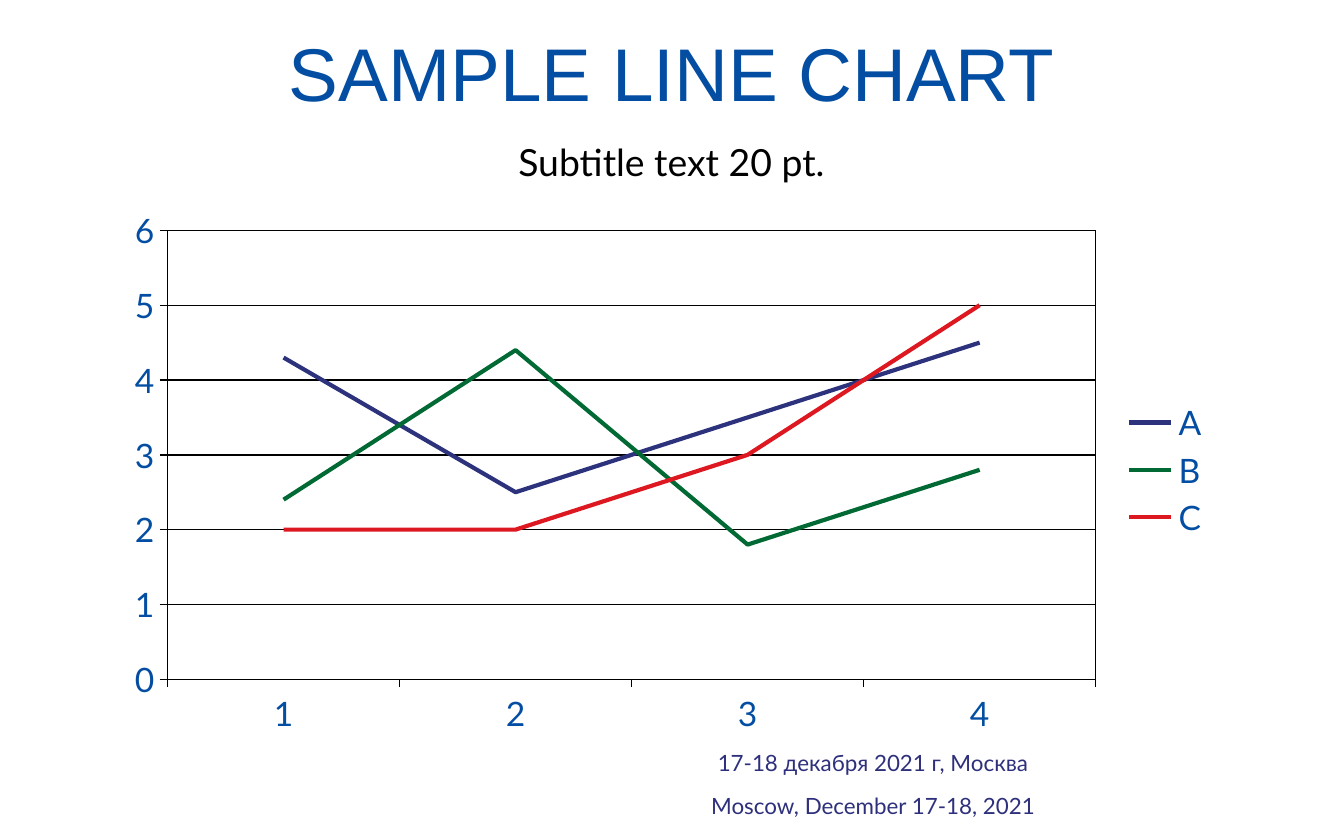
"""Build a slide with a title, a subtitle, a line chart and a dated footer."""
import pptx
import pptx.chart.data
import pptx.dml.color
import pptx.enum.chart
import pptx.enum.text
import pptx.oxml
import pptx.util

Pt = pptx.util.Pt
BLUE = "034EA2"
BLACK = "000000"


def color(hex_string):
    """Turn a hex string into a colour."""
    return pptx.dml.color.RGBColor.from_string(hex_string)


def write(paragraph, text, size, hex_string, font="Lato", space_before=0, indent=0):
    """Write centred, unbulleted text into a paragraph."""
    properties = paragraph._p.get_or_add_pPr()
    properties.set("marL", "0")
    properties.set("indent", str(Pt(indent)))
    properties.append(pptx.oxml.parse_xml(
        '<a:buNone xmlns:a="http://schemas.openxmlformats.org/drawingml/2006/main"/>'))
    paragraph.alignment = pptx.enum.text.PP_ALIGN.CENTER
    paragraph.line_spacing = 0.9
    paragraph.space_before = Pt(space_before)
    run = paragraph.add_run()
    run.text = text
    run.font.size = Pt(size)
    run.font.name = font
    run.font.color.rgb = color(hex_string)


presentation = pptx.Presentation()
presentation.slide_width = Pt(720)
presentation.slide_height = Pt(450)
slide = presentation.slides.add_slide(presentation.slide_layouts[1])

title = slide.shapes.title
subtitle = slide.placeholders[1]
footer = slide.shapes.add_textbox(Pt(325.5), Pt(399.5), Pt(284.5), Pt(43))
title.left, title.top, title.width, title.height = Pt(19.5), Pt(12), Pt(680.5), Pt(59)
subtitle.left, subtitle.top, subtitle.width, subtitle.height = Pt(19.5), Pt(72.5), Pt(680.5), Pt(31)
for shape in (title, subtitle, footer):
    shape.text_frame.word_wrap = True
    shape.text_frame.auto_size = pptx.enum.text.MSO_AUTO_SIZE.NONE
    shape.text_frame.vertical_anchor = pptx.enum.text.MSO_ANCHOR.MIDDLE

write(title.text_frame.paragraphs[0], "SAMPLE LINE CHART", 40, BLUE, font="Arial")
write(subtitle.text_frame.paragraphs[0], "Subtitle text 20 pt.", 20, BLACK)
write(footer.text_frame.paragraphs[0], "17-18 декабря 2021 г, Москва", 12, "2E307C", indent=-16)
write(footer.text_frame.add_paragraph(), "Moscow, December 17-18, 2021", 12, "2E307C", space_before=10)

chart_data = pptx.chart.data.CategoryChartData()
chart_data.categories = ["1", "2", "3", "4"]
chart_data.add_series("A", (4.3, 2.5, 3.5, 4.5))
chart_data.add_series("B", (2.4, 4.4, 1.8, 2.8))
chart_data.add_series("C", (2, 2, 3, 5))
chart = slide.shapes.add_chart(
    pptx.enum.chart.XL_CHART_TYPE.LINE, Pt(60), Pt(106), Pt(595.5), Pt(291.5), chart_data).chart
chart.has_title = False
chart.font.name = "Lato"
chart.font.size = Pt(18)
chart.font.color.rgb = color(BLUE)
chart.has_legend = True
chart.legend.position = pptx.enum.chart.XL_LEGEND_POSITION.RIGHT
chart.legend.include_in_layout = False

plot = chart.plots[0]
plot.vary_by_categories = False
for series, hex_string in zip(plot.series, ("2C327B", "006934", "DD1820")):
    series.smooth = False
    series.format.line.color.rgb = color(hex_string)
    series.format.line.width = Pt(2.25)
    series.marker.style = pptx.enum.chart.XL_MARKER_STYLE.NONE

value_axis = chart.value_axis
value_axis.minimum_scale, value_axis.maximum_scale, value_axis.major_unit = 0, 6, 1
value_axis.has_major_gridlines = True
for axis in (chart.category_axis, value_axis):
    axis.major_tick_mark = pptx.enum.chart.XL_TICK_MARK.OUTSIDE
for part in (chart.category_axis, value_axis, value_axis.major_gridlines):
    part.format.line.color.rgb = color(BLACK)
    part.format.line.width = Pt(0.75)

namespaces = ('xmlns:c="http://schemas.openxmlformats.org/drawingml/2006/chart" '
              'xmlns:a="http://schemas.openxmlformats.org/drawingml/2006/main"')
plot_area = chart._chartSpace.chart.plotArea
for layout in plot_area.xpath("c:layout"):
    plot_area.remove(layout)
plot_area.insert(0, pptx.oxml.parse_xml(
    f'<c:layout {namespaces}><c:manualLayout><c:layoutTarget val="inner"/>'
    '<c:xMode val="edge"/><c:yMode val="edge"/><c:x val="0.05"/><c:y val="0.06"/>'
    '<c:w val="0.835"/><c:h val="0.825"/></c:manualLayout></c:layout>'))
plot_area.append(pptx.oxml.parse_xml(
    f'<c:spPr {namespaces}><a:noFill/><a:ln w="{Pt(0.75)}"><a:solidFill>'
    f'<a:srgbClr val="{BLACK}"/></a:solidFill></a:ln></c:spPr>'))

presentation.save("out.pptx")
